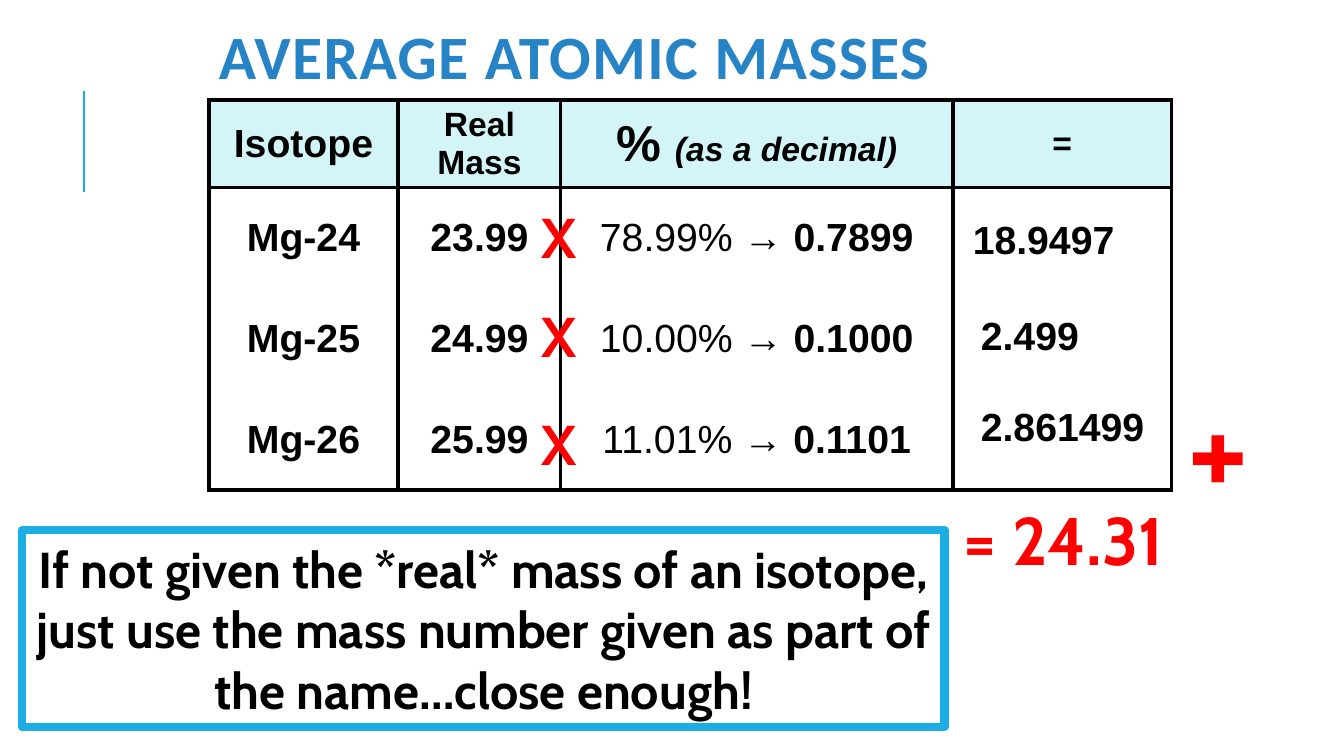
from itertools import accumulate

from pptx import Presentation
from pptx.dml.color import RGBColor
from pptx.enum.shapes import MSO_CONNECTOR, MSO_SHAPE
from pptx.enum.text import MSO_ANCHOR, PP_ALIGN
from pptx.oxml.ns import qn
from pptx.util import Inches, Pt
from lxml import etree

MIDDLE, TOP = MSO_ANCHOR.MIDDLE, MSO_ANCHOR.TOP
LEFT, CENTER = PP_ALIGN.LEFT, PP_ALIGN.CENTER
STRAIGHT, RECTANGLE = MSO_CONNECTOR.STRAIGHT, MSO_SHAPE.RECTANGLE

BLACK = RGBColor(0x00, 0x00, 0x00)
WHITE = RGBColor(0xFF, 0xFF, 0xFF)
RED = RGBColor(0xFF, 0x00, 0x00)
TITLE_BLUE = RGBColor(0x26, 0x83, 0xC6)
ACCENT_BLUE = RGBColor(0x1C, 0xAD, 0xE4)
HEADER_AQUA = RGBColor(0xD4, 0xF5, 0xF7)

# The slide is a grid of one-inch units; the table sets its own tracks on it.
GRID_COLUMNS, GRID_ROWS = 13.33, 7.5
TABLE_LEFT, TABLE_TOP = 2.07, 0.99
COLUMN_WIDTHS = (1.88, 1.61, 3.89, 2.17)
ROW_HEIGHTS = (0.87, 1, 1, 1)
COLUMN_EDGES = list(accumulate(COLUMN_WIDTHS, initial=TABLE_LEFT))
ROW_EDGES = list(accumulate(ROW_HEIGHTS, initial=TABLE_TOP))

# Each run is (text, size, bold, italic).
HEADERS = (
    [("Isotope", 28, True, False)],
    [("Real Mass", 24, True, False)],
    [("% ", 36, True, False), ("(as a decimal)", 24, True, True)],
    [("=", 24, True, False)],
)
ISOTOPES = (
    ("Mg-24", "23.99", "78.99% ", "→ 0.7899"),
    ("Mg-25", "24.99", "10.00% ", "→ 0.1000"),
    ("Mg-26", "25.99", "11.01% ", "→ 0.1101"),
)
# Each product is (text, inset from column edge, drop below row edge, width).
PRODUCTS = (
    ("18.9497", 0, 0.23, 1.7),
    ("2.499", 0.08, 0.18, 1.7),
    ("2.861499", 0.08, 0.08, 1.88),
)
TIMES_DROPS = (0.1, 0.08, 0.15)


def grid(*lengths):
    return [Inches(length) for length in lengths]


def style_run(run, font_name, size, color, bold=True, italic=False):
    font = run.font
    font.name, font.size = font_name, Pt(size)
    font.bold, font.italic = bold, italic
    font.color.rgb = color


def write(frame, text, font_name, size, color, align=LEFT, anchor=TOP):
    """Fill a text frame with one uniformly formatted paragraph."""
    frame.text = text
    frame.word_wrap = True
    frame.vertical_anchor = anchor
    paragraph = frame.paragraphs[0]
    paragraph.alignment = align
    style_run(paragraph.runs[0], font_name, size, color)


def add_label(slide, area, text, font_name, size, color):
    label = slide.shapes.add_textbox(*grid(*area))
    write(label.text_frame, text, font_name, size, color)


def set_borders(cell, sides):
    """Draw black borders on the named sides and clear the others."""
    properties = cell._tc.get_or_add_tcPr()
    for side in "LRTB":
        border = etree.SubElement(properties, qn(f"a:ln{side}"), w=str(Pt(3)))
        if side in sides:
            fill = etree.SubElement(border, qn("a:solidFill"))
            etree.SubElement(fill, qn("a:srgbClr"), val=str(BLACK))
        else:
            etree.SubElement(border, qn("a:noFill"))


def fill_cell(cell, runs, color, sides):
    set_borders(cell, sides)
    cell.fill.solid()
    cell.fill.fore_color.rgb = color
    cell.vertical_anchor = MIDDLE
    paragraph = cell.text_frame.paragraphs[0]
    paragraph.alignment = CENTER
    for text, size, bold, italic in runs:
        run = paragraph.add_run()
        run.text = text
        style_run(run, "Arial", size, BLACK, bold, italic)


def add_isotope_table(slide):
    area = grid(TABLE_LEFT, TABLE_TOP, sum(COLUMN_WIDTHS), sum(ROW_HEIGHTS))
    table = slide.shapes.add_table(len(ROW_HEIGHTS), len(COLUMN_WIDTHS), *area).table
    table.horz_banding = False
    for column, width in zip(table.columns, COLUMN_WIDTHS):
        column.width = Inches(width)
    for row, height in zip(table.rows, ROW_HEIGHTS):
        row.height = Inches(height)
    for index, runs in enumerate(HEADERS):
        fill_cell(table.cell(0, index), runs, HEADER_AQUA, "LRTB")
    for row, (isotope, mass, percent, decimal) in enumerate(ISOTOPES, start=1):
        sides = {1: "LRT", len(ISOTOPES): "LRB"}.get(row, "LR")
        contents = (
            [(isotope, 28, True, False)],
            [(mass, 28, True, False)],
            [(percent, 28, False, False), (decimal, 28, True, False)],
            [],
        )
        for index, runs in enumerate(contents):
            fill_cell(table.cell(row, index), runs, WHITE, sides)


def add_title(slide, text):
    title = slide.shapes.title
    title.left, title.top, title.width, title.height = grid(TABLE_LEFT, 0.24, 8.58, 0.75)
    write(title.text_frame, text, "Calibri", 44, TITLE_BLUE, anchor=MIDDLE)
    paragraph = title.text_frame.paragraphs[0]
    paragraph.line_spacing = 0.8
    paragraph.runs[0].font._element.set("spc", "100")


def add_accent_line(slide):
    line = slide.shapes.add_connector(STRAIGHT, *grid(0.83, 1.9, 0.83, 0.9))
    line.line.color.rgb = ACCENT_BLUE
    line.line.width = Pt(1.5)
    etree.SubElement(line._element.spPr, qn("a:effectLst"))


def add_note(slide, text):
    note = slide.shapes.add_shape(RECTANGLE, *grid(0.22, 5.26, 9.15, 1.95))
    note.shadow.inherit = False
    note.fill.background()
    note.line.color.rgb = ACCENT_BLUE
    note.line.width = Pt(6)
    write(note.text_frame, text, "Cabin", 36, BLACK, CENTER, MIDDLE)


def main():
    deck = Presentation()
    deck.slide_width, deck.slide_height = grid(GRID_COLUMNS, GRID_ROWS)
    slide = deck.slides.add_slide(deck.slide_layouts[5])

    add_accent_line(slide)
    add_title(slide, "AVERAGE ATOMIC MASSES")
    add_isotope_table(slide)

    for row_top, drop in zip(ROW_EDGES[1:], TIMES_DROPS):
        area = (COLUMN_EDGES[2] - 0.29, row_top + drop, 0.54, 0.77)
        add_label(slide, area, "X", "Cabin", 40, RED)
    add_label(slide, (11.68, 3.54, 0.54, 1.72), "+", "Cabin", 96, RED)
    add_label(slide, (9.46, ROW_EDGES[-1] + 0.03, 4.11, 0.91), "= 24.31", "Cabin", 48, RED)
    for row_top, (product, inset, drop, width) in zip(ROW_EDGES[1:], PRODUCTS):
        area = (COLUMN_EDGES[3] + 0.1 + inset, row_top + drop, width, 0.57)
        add_label(slide, area, product, "Arial", 28, BLACK)

    add_note(slide, "If not given the *real* mass of an isotope, just use the mass "
                    "number given as part of the name…close enough!")
    deck.save("out.pptx")


if __name__ == "__main__":
    main()
